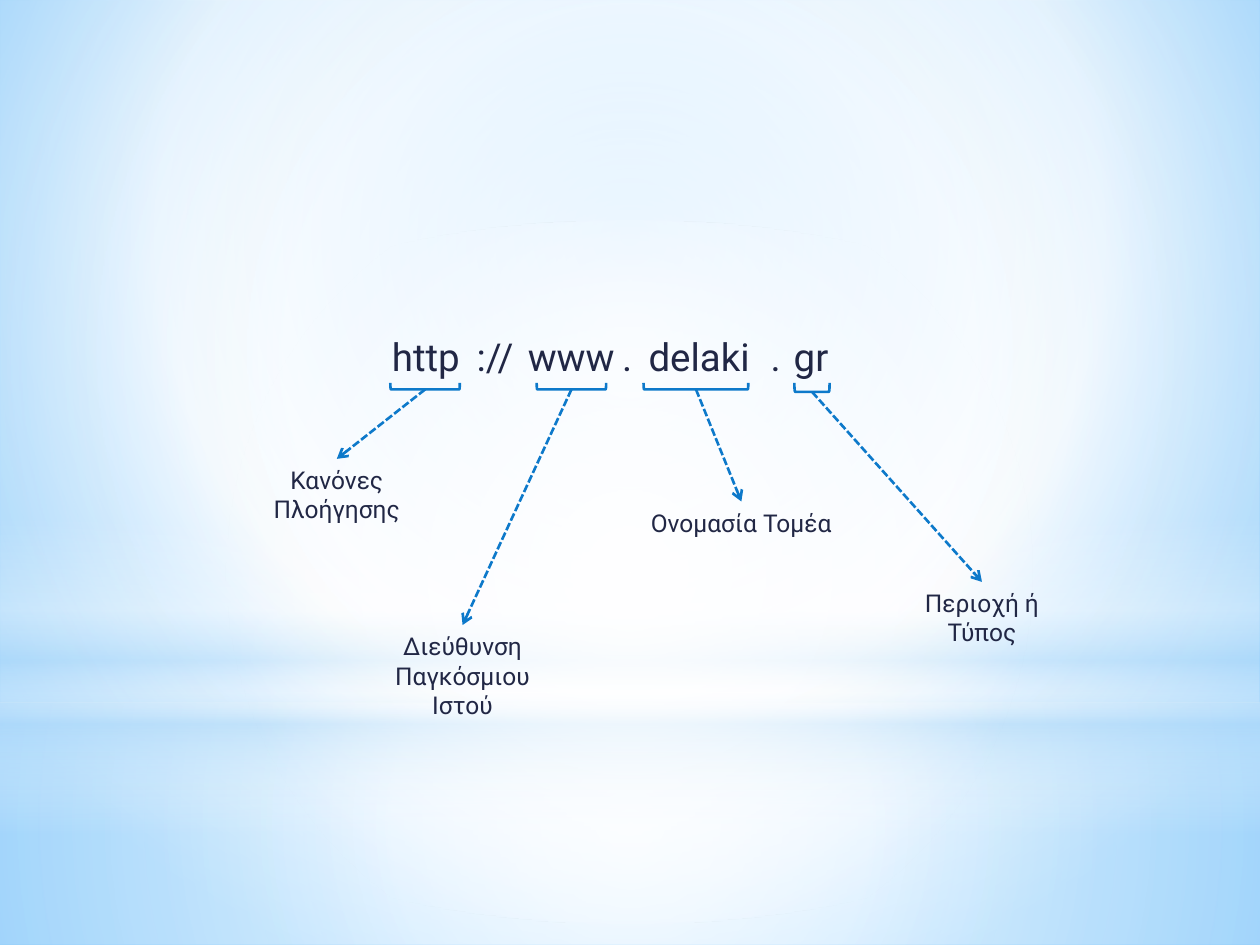
import pptx
import pptx.util
import pptx.oxml
import pptx.oxml.ns
import pptx.dml.color
import pptx.enum.dml
import pptx.enum.shapes
import pptx.enum.text
import lxml.etree
from dataclasses import dataclass

Cm = pptx.util.Cm
Pt = pptx.util.Pt
RGB = pptx.dml.color.RGBColor.from_string
Kind = pptx.enum.shapes.MSO_SHAPE
qn = pptx.oxml.ns.qn


@dataclass(frozen=True)
class Theme:
    font: str = "Roboto"
    ink: str = "212745"
    line: str = "0D79CA"
    white: str = "FFFFFF"
    pale: str = "B4DCFA"
    sky: str = "9ED5FF"
    edge: str = "5BB9FF"
    big: int = 22
    small: int = 14
    stroke: float = 1.5


theme = Theme()


def shade(root, fill, stops, focus=None):
    """Fill with stops of (place, colour, opacity), all in percent.

    focus is the inner rectangle of a round gradient; without it the
    gradient runs from top to bottom.
    """
    fill.gradient()
    marks = "".join(
        f'<a:gs pos="{place * 1000}"><a:srgbClr val="{colour}">'
        f'<a:alpha val="{alpha * 1000}"/></a:srgbClr></a:gs>'
        for place, colour, alpha in stops)
    if focus:
        sides = " ".join(f'{k}="{v * 1000}"' for k, v in zip("ltrb", focus))
        way = f'<a:path path="circle"><a:fillToRect {sides}/></a:path>'
    else:
        way = '<a:lin ang="5400000" scaled="0"/>'
    old = root.find(".//" + qn("a:gradFill"))
    new = pptx.oxml.parse_xml(
        f'<a:gradFill {pptx.oxml.ns.nsdecls("a")} rotWithShape="1">'
        f"<a:gsLst>{marks}</a:gsLst>{way}</a:gradFill>")
    old.getparent().replace(old, new)


def write(text, left, top, width, height, size=theme.small,
          colour=theme.ink, align=pptx.enum.text.PP_ALIGN.CENTER):
    box = slide.shapes.add_textbox(Cm(left), Cm(top), Cm(width), Cm(height))
    frame = box.text_frame
    frame.word_wrap = True
    frame.auto_size = pptx.enum.text.MSO_AUTO_SIZE.SHAPE_TO_FIT_TEXT
    para = frame.paragraphs[0]
    para.text = text
    para.alignment = align
    for run in para.runs:
        run.font.name = theme.font
        run.font.size = Pt(size)
        run.font.color.rgb = RGB(colour)
    return box


deck = pptx.Presentation()
deck.slide_width, deck.slide_height = Cm(25.4), Cm(19.05)
slide = deck.slides.add_slide(deck.slide_layouts[6])

# Backdrop
white, pale = theme.white, theme.pale
shade(slide._element, slide.background.fill,
      [(0, theme.sky, 100), (60, white, 100), (100, theme.edge, 100)],
      focus=(20, 10, 20, 60))
mid = (50, 50, 50, 50)
layers = [
    (Kind.RECTANGLE, 14.17, 4.88, mid,
     [(0, white, 91), (37, white, 76), (100, pale, 79)]),
    (Kind.RECTANGLE, 0, 14.17, mid,
     [(0, white, 89), (48, white, 62), (100, pale, 79)]),
    (Kind.RECTANGLE, 10.46, 6.35, None,
     [(0, white, 0), (29, white, 30), (45, pale, 40),
      (55, white, 26), (65, pale, 60), (100, white, 0)]),
    (Kind.OVAL, 4.45, 14.17, mid, [(0, white, 100), (56, white, 0)]),
]
for kind, top, height, focus, stops in layers:
    layer = slide.shapes.add_shape(
        kind, 0, Cm(top), deck.slide_width, Cm(height))
    layer.shadow.inherit = False
    layer.line.fill.background()
    shade(layer._element, layer.fill, stops, focus)

# Web address, piece by piece
pieces = [("http", 7.29, 2.59), ("://", 9.04, 1.88), ("www", 10.31, 2.41),
          (".", 12.29, 0.71), ("delaki", 12.52, 3.15), (".", 15.21, 0.86),
          ("gr", 15.65, 1.4)]
for text, left, width in pieces:
    write(text, left, 6.58, width, 1.19, size=theme.big)

# Bracket (centre, span, depth) under each part, with an arrow to its label
parts = [
    (8.57, 1.4, 0.13, "Κανόνες Πλοήγησης", (4.34, 9.25, 4.9, 0.86)),
    (11.52, 1.4, 0.13, "Διεύθυνση\vΠαγκόσμιου Ιστού",
     (7.7, 12.6, 3.25, 2.06)),
    (14.03, 2.11, 0.13, "Ονομασία Τομέα", (12.8, 10.11, 4.29, 0.86)),
    (16.37, 0.71, 0.18, "Περιοχή ή Τύπος", (17.7, 11.73, 4.19, 0.86)),
]
roof = 7.72
for centre, span, depth, text, place in parts:
    label = write(text, *place)
    # Turned a quarter, so depth is its width and span its height
    brace = slide.shapes.add_shape(
        Kind.LEFT_BRACKET, Cm(centre - depth / 2),
        Cm(roof + depth / 2 - span / 2), Cm(depth), Cm(span))
    brace.rotation = 270
    brace.shadow.inherit = False
    brace.fill.background()
    arrow = slide.shapes.add_connector(
        pptx.enum.shapes.MSO_CONNECTOR.STRAIGHT,
        Cm(centre), Cm(roof + depth), Cm(centre), Cm(place[1]))
    arrow.end_connect(label, 0)
    for item in (brace, arrow):
        item.line.color.rgb = RGB(theme.line)
        item.line.width = Pt(theme.stroke)
    arrow.line.dash_style = pptx.enum.dml.MSO_LINE.SQUARE_DOT
    props = arrow._element.spPr
    lxml.etree.SubElement(props.find(qn("a:ln")), qn("a:tailEnd"),
                          type="arrow")
    lxml.etree.SubElement(props, qn("a:effectLst"))

deck.save("out.pptx")
